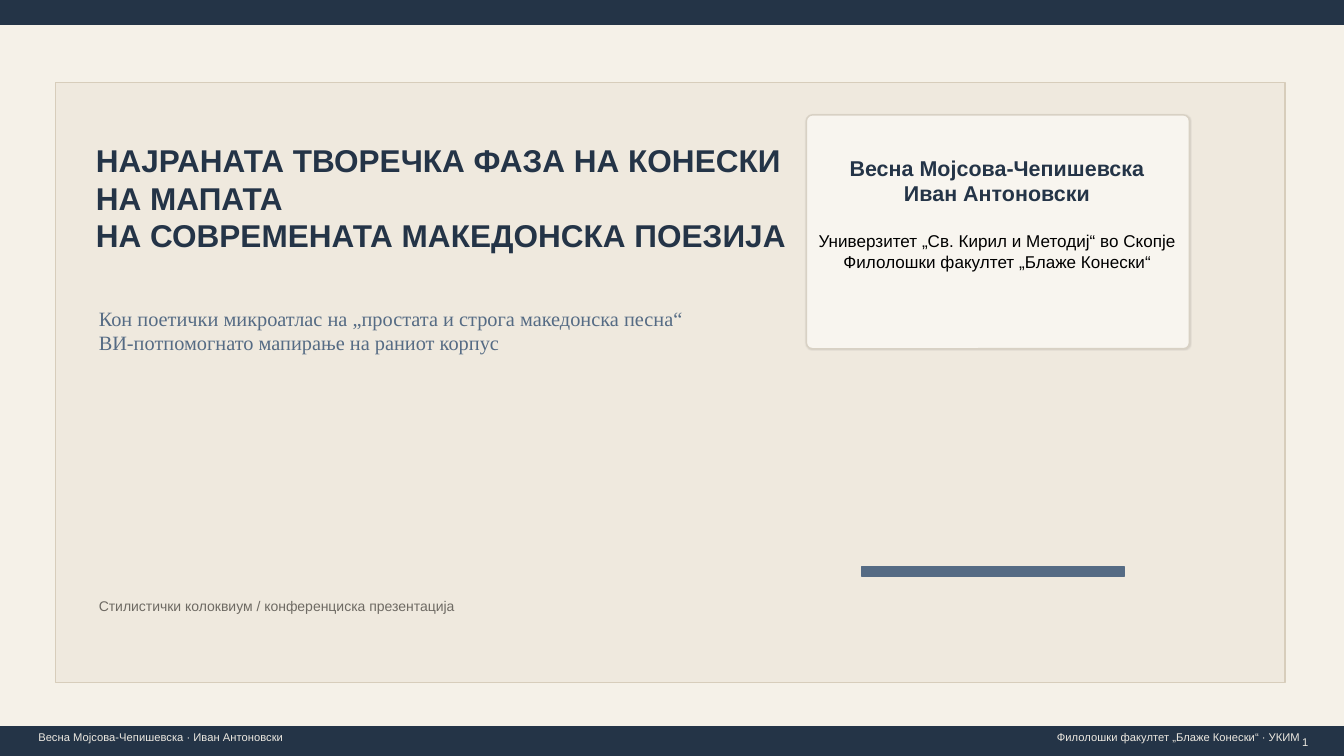
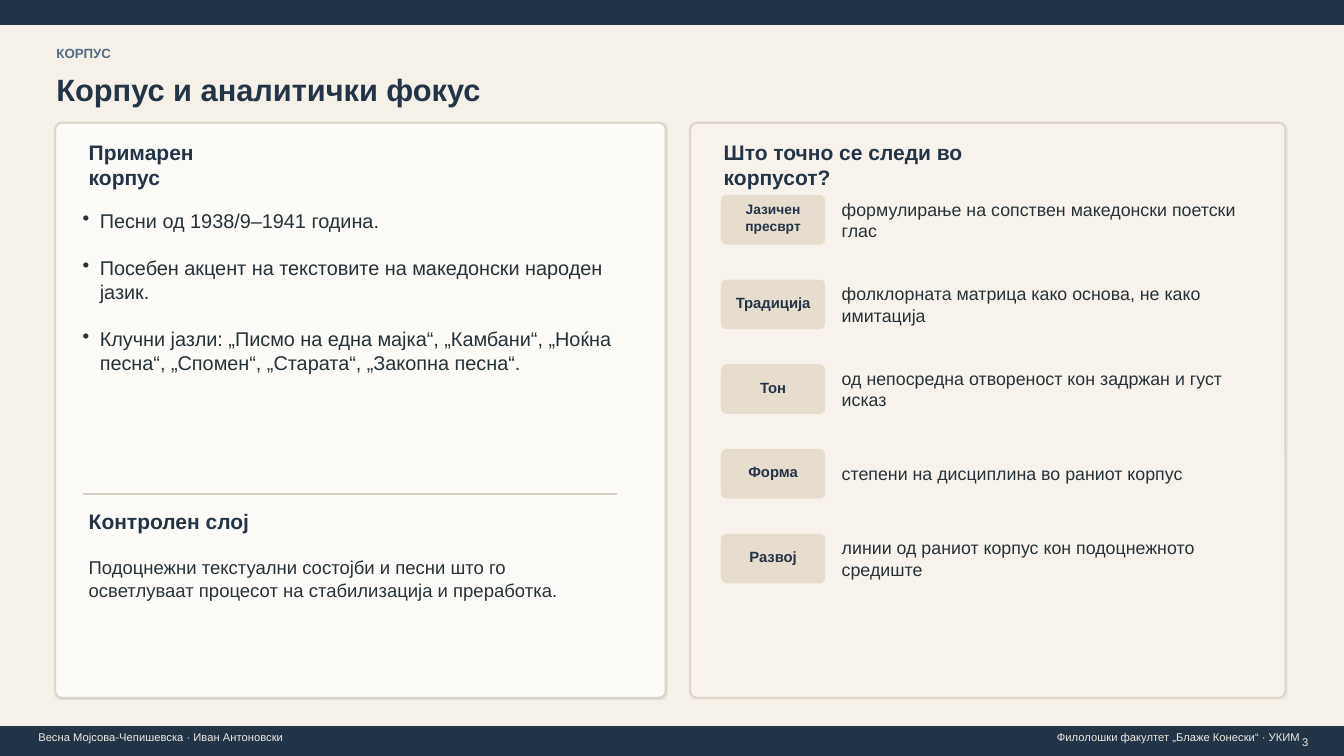
from lxml.etree import SubElement
from pptx import Presentation
from pptx.dml.color import RGBColor
from pptx.enum.shapes import MSO_CONNECTOR as Connector, MSO_SHAPE as Preset
from pptx.enum.text import MSO_ANCHOR as Anchor, PP_ALIGN as Align
from pptx.oxml.ns import qn
from pptx.util import Inches, Pt

WIDTH, HEIGHT = Inches(13.33), Inches(7.5)
NAVY, SLATE, INK, GREY = "243447", "556B84", "263238", "6E6A63"
PAPER, PANEL, TAG, EDGE, PALE = "F5F1E8", "EFE9DE", "E7DDCE", "D8D1C4", "EDE9E1"
SANS, SERIF = "Arial", "Times New Roman"

MARGIN = 4.13
CARD_TOP, CARD_HEIGHT = 16.27, 76
HEADING_TOP = 20.53
TAG_TOP, TAG_STEP, TAG_HEIGHT = 25.87, 11.2, 6.4
FOOTER_TOP, FOOTER_HEIGHT = 96.67, 1.6

FOCUS_ROWS = [
    ("Јазичен\nпресврт", 9.8, "формулирање на сопствен македонски поетски глас"),
    ("Традиција", 10.6, "фолклорната матрица како основа, не како имитација"),
    ("Тон", 10.6, "од непосредна отвореност кон задржан и густ исказ"),
    ("Форма", 10.6, "степени на дисциплина во раниот корпус"),
    ("Развој", 10.6, "линии од раниот корпус кон подоцнежното средиште"),
]
CORPUS_POINTS = [
    "Песни од 1938/9–1941 година.",
    "Посебен акцент на текстовите на македонски народен јазик.",
    "Клучни јазли: „Писмо на една мајка“, „Камбани“, „Ноќна песна“, "
    "„Спомен“, „Старата“, „Закопна песна“.",
]


def color(code):
    return RGBColor.from_string(code)


def across(share):
    """Length for a percentage of the slide's width."""
    return int(WIDTH * share / 100)


def down(share):
    """Length for a percentage of the slide's height."""
    return int(HEIGHT * share / 100)


def place(left, top, width, height):
    return across(left), down(top), across(width), down(height)


def write(shape, text, size, code, bold=False, font=SANS, align=Align.LEFT, anchor=Anchor.MIDDLE):
    """Fill a shape with text in one style, one paragraph a line."""
    frame = shape.text_frame
    frame.word_wrap = True
    frame.vertical_anchor = anchor
    frame.margin_left = frame.margin_right = frame.margin_top = frame.margin_bottom = 0
    frame.text = text
    for para in frame.paragraphs:
        para.alignment = align
        for span in para.runs:
            span.font.size = Pt(size)
            span.font.name = font
            span.font.bold = bold
            span.font.color.rgb = color(code)
    return frame


def add_text(page, area, text, size, code, **style):
    return write(page.shapes.add_textbox(*place(*area)), text, size, code, **style)


def add_block(page, area, fill, line, corner=None):
    """Rectangle, with round corners when a corner share is given."""
    preset = Preset.RECTANGLE if corner is None else Preset.ROUNDED_RECTANGLE
    block = page.shapes.add_shape(preset, *place(*area))
    if corner is not None:
        block.adjustments[0] = corner
    block.fill.solid()
    block.fill.fore_color.rgb = color(fill)
    block.line.color.rgb = color(line)
    block.line.width = Pt(1)
    block.shadow.inherit = False
    return block


def add_card(page, area, fill, corner):
    """Round panel with a faint shadow."""
    card = add_block(page, area, fill, EDGE, corner)
    effects = card.element.spPr.find(qn("a:effectLst"))
    shadow = SubElement(effects, qn("a:outerShdw"), blurRad=str(Pt(0.8)), dist=str(Pt(0.3)),
                        dir=str(45 * 60000), algn="ctr", rotWithShape="0")
    black = SubElement(shadow, qn("a:srgbClr"), val="000000")
    SubElement(black, qn("a:alpha"), val="10000")


def add_rule(page, left, right, top):
    rule = page.shapes.add_connector(Connector.STRAIGHT, across(left), down(top),
                                     across(right), down(top))
    rule.line.color.rgb = color(EDGE)
    rule.line.width = Pt(1)
    SubElement(rule.element.spPr, qn("a:effectLst"))


def add_bullets(page, area, points, size):
    frame = add_text(page, area, "\n".join(points), size, INK, anchor=Anchor.TOP)
    indent = Inches(0.17)
    for index, para in enumerate(frame.paragraphs):
        props = para._p.get_or_add_pPr()
        props.set("marL", str(indent))
        props.set("indent", str(-indent))
        SubElement(props, qn("a:buChar"), char="•")
        if index:
            para.space_before = Pt(16.7)


def add_heading(page, left, top, width, text):
    add_text(page, (left, top, width, 2.4), text, 15, NAVY, bold=True)


def add_number(page, number):
    frame = add_text(page, (96.15, FOOTER_TOP, 1.5, FOOTER_HEIGHT), str(number), 8, PALE,
                     align=Align.RIGHT, anchor=Anchor.TOP)
    frame.margin_top = Inches(0.05)
    frame.margin_right = Inches(0.04)


def dress_layout(layout, page):
    """Draw the shared bands and footers on a page and move them to its layout."""
    add_block(page, (0, 0, 100, 3.2), NAVY, NAVY)
    add_block(page, (0, 96.13, 100, 3.87), NAVY, NAVY)
    add_text(page, (2.85, FOOTER_TOP, 46.5, FOOTER_HEIGHT),
             "Весна Мојсова-Чепишевска · Иван Антоновски", 8, PALE)
    add_text(page, (60.75, FOOTER_TOP, 36, FOOTER_HEIGHT),
             "Филолошки факултет „Блаже Конески“ · УКИМ", 8, PALE, align=Align.RIGHT)
    for placeholder in list(layout.placeholders):
        layout.shapes.element.remove(placeholder.element)
    for shape in list(page.shapes):
        layout.shapes.element.append(shape.element)


def build_cover(page):
    add_block(page, (MARGIN, 10.93, 91.5, 79.33), PANEL, "D7CDBB")
    add_text(page, (7.13, 16.8, 52.13, 18.67),
             "НАЈРАНАТА ТВОРЕЧКА ФАЗА НА КОНЕСКИ НА МАПАТА\n"
             "НА СОВРЕМЕНАТА МАКЕДОНСКА ПОЕЗИЈА", 22.5, NAVY, bold=True)
    add_text(page, (7.35, 40, 48.75, 7.47),
             "Кон поетички микроатлас на „простата и строга македонска песна“\n"
             "ВИ-потпомогнато мапирање на раниот корпус", 14.5, SLATE, font=SERIF)
    add_card(page, (60, 15.2, 28.5, 30.93), "F8F5EF", 0.026)
    add_text(page, (62.1, 20, 24.15, 7.73), "Весна Мојсова-Чепишевска\nИван Антоновски",
             15.3, NAVY, bold=True, align=Align.CENTER)
    add_text(page, (60.23, 29.07, 27.97, 8.27),
             "Универзитет „Св. Кирил и Методиј“ во Скопје\n"
             "Филолошки факултет „Блаже Конески“", 12.2, "000000", align=Align.CENTER)
    add_text(page, (7.35, 78.93, 35.25, 2.4),
             "Стилистички колоквиум / конференциска презентација", 10, GREY)
    add_block(page, (64.13, 74.93, 19.5, 1.33), SLATE, SLATE)
    add_number(page, 1)


def build_corpus(page):
    add_text(page, (4.2, 5.87, 20.25, 2.4), "КОРПУС", 9.5, SLATE, bold=True)
    add_text(page, (4.2, 8.8, 67.5, 6), "Корпус и аналитички фокус", 22, NAVY, bold=True)
    add_card(page, (MARGIN, CARD_TOP, 45.38, CARD_HEIGHT), "FCFBF8", 0.011)
    add_card(page, (51.38, CARD_TOP, 44.25, CARD_HEIGHT), "F7F3EC", 0.011)

    add_heading(page, 6.6, HEADING_TOP, 13.5, "Примарен корпус")
    add_bullets(page, (6.15, 27.6, 39.75, 32.93), CORPUS_POINTS, 14.2)
    add_rule(page, 6.15, 45.9, 65.33)
    add_heading(page, 6.6, 67.73, 13.5, "Контролен слој")
    add_text(page, (6.6, 71.73, 38.1, 9.6),
             "Подоцнежни текстуални состојби и песни што го осветлуваат "
             "процесот на стабилизација и преработка.", 13.2, INK)

    add_heading(page, 53.85, HEADING_TOP, 20.25, "Што точно се следи во корпусот?")
    for row, (label, size, meaning) in enumerate(FOCUS_ROWS):
        top = TAG_TOP + row * TAG_STEP
        tag = add_block(page, (53.7, top, 7.65, TAG_HEIGHT), TAG, TAG, 0.104)
        frame = write(tag, label, size, NAVY, bold=True, align=Align.CENTER)
        frame.margin_bottom = Inches(0.04)
        add_text(page, (62.63, top, 29.4, TAG_HEIGHT), meaning, 12.7, INK)
    add_number(page, 3)


def main():
    deck = Presentation()
    deck.slide_width, deck.slide_height = WIDTH, HEIGHT
    backdrop = deck.slide_master.background.fill
    backdrop.solid()
    backdrop.fore_color.rgb = color(PAPER)
    blank = deck.slide_layouts[6]
    cover = deck.slides.add_slide(blank)
    dress_layout(blank, cover)
    build_cover(cover)
    build_corpus(deck.slides.add_slide(blank))
    deck.save("out.pptx")


if __name__ == "__main__":
    main()
